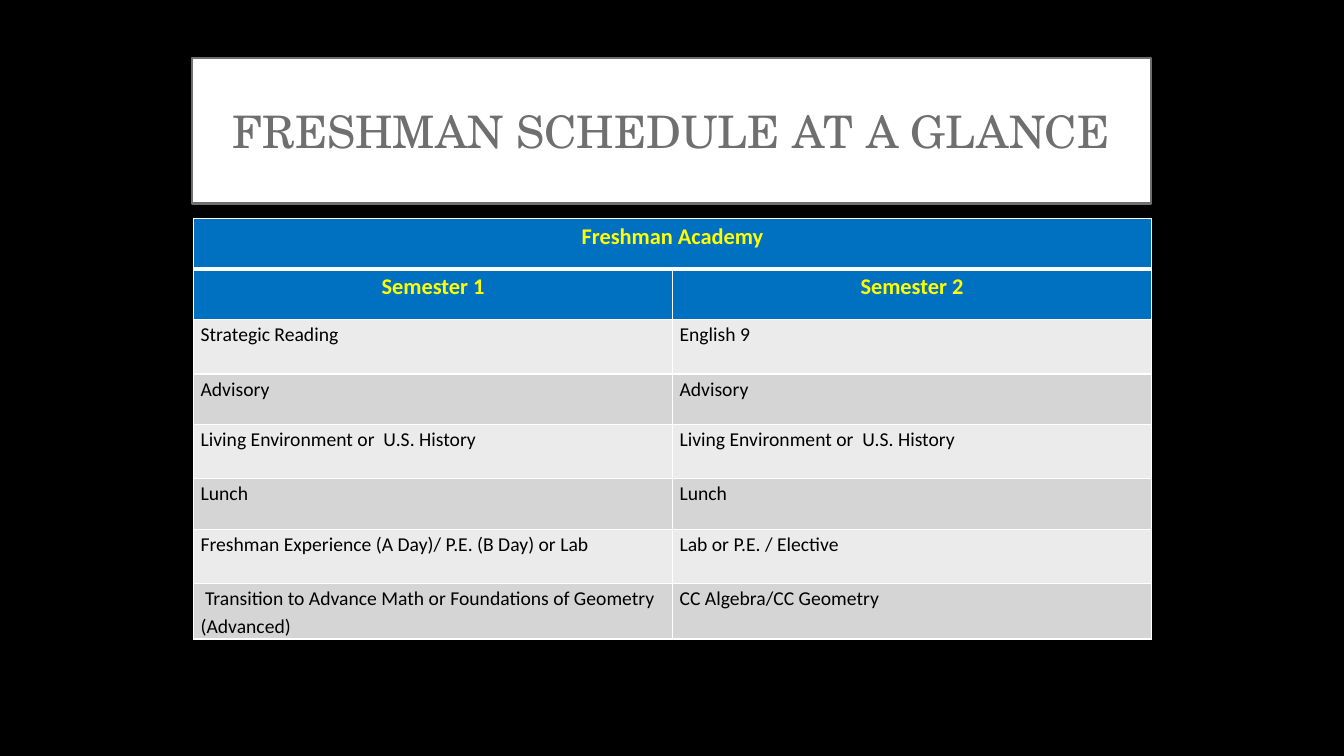
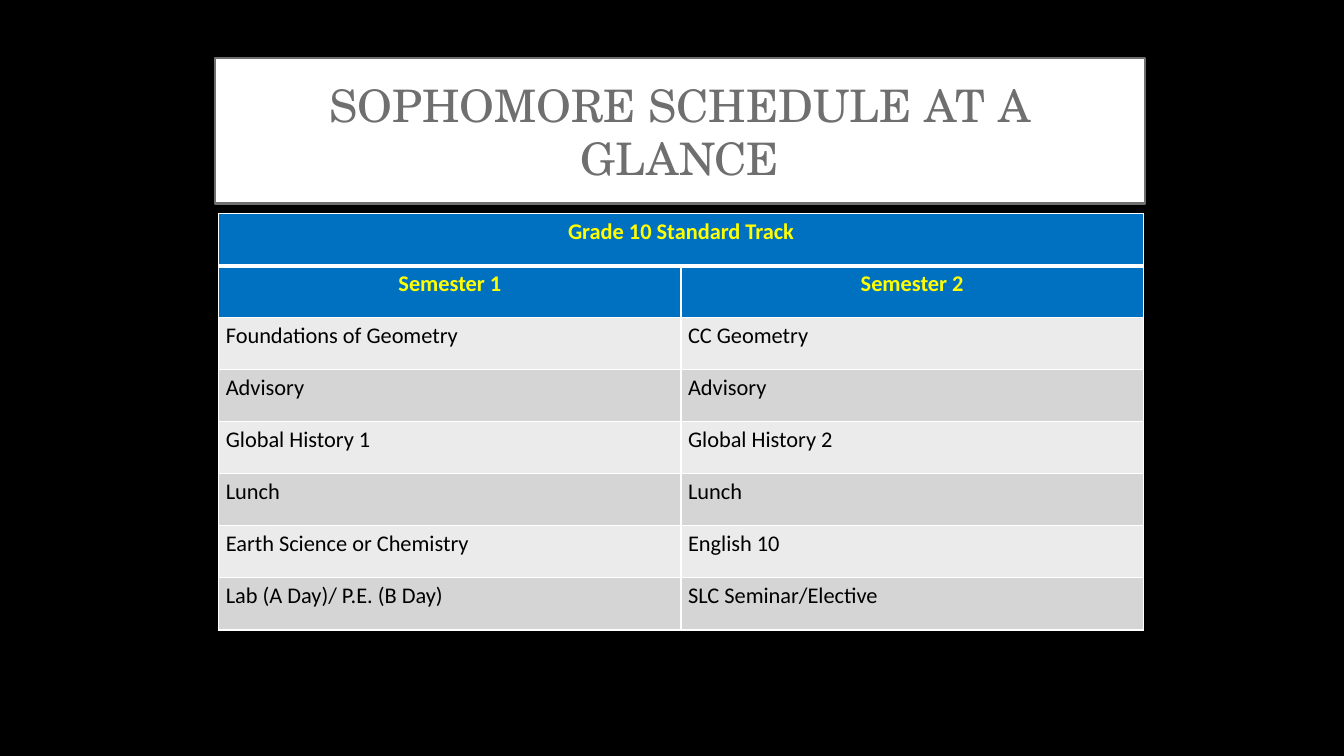
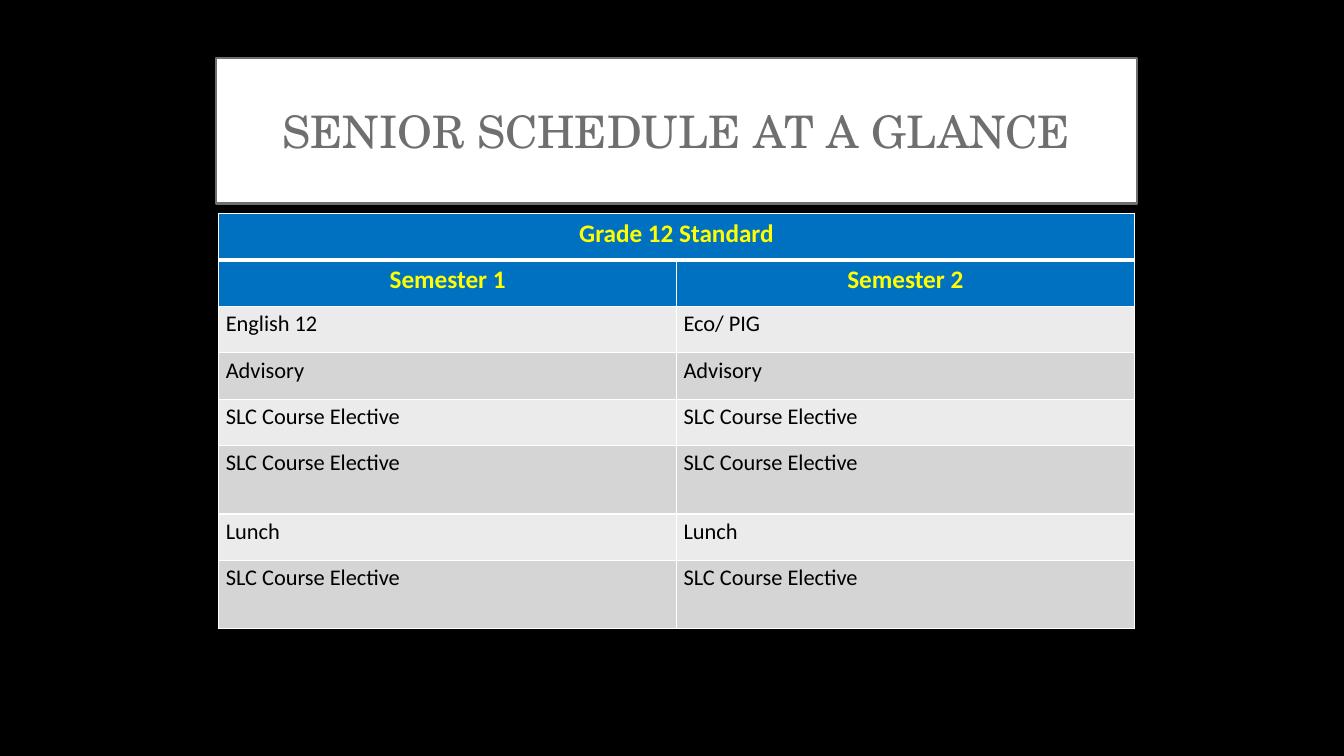
"""Build three slides that show class schedules by grade."""
from dataclasses import dataclass

from lxml import etree
from pptx import Presentation
from pptx.dml.color import RGBColor
from pptx.enum.shapes import MSO_SHAPE
from pptx.enum.text import MSO_ANCHOR, PP_ALIGN
from pptx.oxml.ns import qn
from pptx.util import Inches, Pt

RECT = MSO_SHAPE.RECTANGLE
MIDDLE = MSO_ANCHOR.MIDDLE
LEFT, CENTER = PP_ALIGN.LEFT, PP_ALIGN.CENTER
BLACK, WHITE, GRAY = "000000", "FFFFFF", "6F6F6F"
BLUE, YELLOW = "0070C0", "FFFF00"
BANDS = ("EBEBEB", "D5D5D5")
SERIF, SANS = "TeX Gyre Schola", "Calibri"
TOP, HIGH = 0.58, 1.44
THIN, THICK = 1, 3


@dataclass
class Plan:
    title: str
    box: tuple[float, float]
    grid: tuple[float, float, float]
    rows: list[float]
    sizes: tuple[int, int]
    head: str
    terms: list[tuple[str, str]]


PLANS = [
    Plan("FRESHMAN SCHEDULE AT A GLANCE", (1.9, 9.52), (1.92, 2.17, 9.5),
         [0.5, 0.5, 0.54, 0.5, 0.54, 0.5, 0.54, 0.55], (16, 14),
         "Freshman Academy", [
             ("Strategic Reading", "English 9"),
             ("Advisory", "Advisory"),
             ("Living Environment or  U.S. History",
              "Living Environment or  U.S. History"),
             ("Lunch", "Lunch"),
             ("Freshman Experience (A Day)/ P.E. (B Day) or Lab",
              "Lab or P.E. / Elective"),
             (" Transition to Advance Math or Foundations of Geometry (Advanced)",
              "CC Algebra/CC Geometry")]),
    Plan("SOPHOMORE SCHEDULE AT A GLANCE", (2.13, 9.23), (2.17, 2.12, 9.17),
         [4.13 / 8] * 8, (16, 16),
         "Grade 10 Standard Track", [
             ("Foundations of Geometry", "CC Geometry"),
             ("Advisory", "Advisory"),
             ("Global History 1", "Global History 2"),
             ("Lunch", "Lunch"),
             ("Earth Science or Chemistry", "English 10"),
             ("Lab (A Day)/ P.E. (B Day)", "SLC Seminar/Elective")]),
    Plan("SENIOR SCHEDULE AT A GLANCE", (2.14, 9.14), (2.17, 2.12, 9.08),
         [0.46, 0.46, 0.46, 0.46, 0.46, 0.68, 0.46, 0.68], (18, 16),
         "Grade 12 Standard", [
             ("English 12", "Eco/ PIG"),
             ("Advisory", "Advisory"),
             ("SLC Course Elective", "SLC Course Elective"),
             ("SLC Course Elective", "SLC Course Elective"),
             ("Lunch", "Lunch"),
             ("SLC Course Elective", "SLC Course Elective")]),
]


def paint(fill, tone: str) -> None:
    fill.solid()
    fill.fore_color.rgb = RGBColor.from_string(tone)


def write(frame, text: str, *, size: int, font: str, tone: str,
          bold: bool = False, align=LEFT, space: float = 1.0) -> None:
    para = frame.paragraphs[0]
    para.alignment = align
    para.line_spacing = space
    run = para.add_run()
    run.text = text
    run.font.size = Pt(size)
    run.font.name = font
    run.font.bold = bold
    run.font.color.rgb = RGBColor.from_string(tone)


def edge(cell, top: int, base: int) -> None:
    props = cell._tc.get_or_add_tcPr()
    sides = {"lnL": THIN, "lnR": THIN, "lnT": top, "lnB": base}
    for spot, (side, width) in enumerate(sides.items()):
        line = etree.Element(qn(f"a:{side}"), w=str(Pt(width)))
        fill = etree.SubElement(line, qn("a:solidFill"))
        etree.SubElement(fill, qn("a:srgbClr"), val=WHITE)
        props.insert(spot, line)


def add_title(slide, plan: Plan) -> None:
    left, width = plan.box
    box = slide.shapes.add_shape(RECT, Inches(left), Inches(TOP),
                                 Inches(width), Inches(HIGH))
    box.shadow.inherit = False
    paint(box.fill, WHITE)
    paint(box.line.fill, GRAY)
    box.line.width = Pt(1.5)
    frame = box.text_frame
    frame.word_wrap = True
    frame.vertical_anchor = MIDDLE
    write(frame, plan.title, size=32, font=SERIF, tone=GRAY, align=CENTER)


def add_grid(slide, plan: Plan) -> None:
    left, top, width = plan.grid
    texts = [(plan.head, ""), ("Semester 1", "Semester 2"), *plan.terms]
    table = slide.shapes.add_table(
        len(texts), 2, Inches(left), Inches(top),
        Inches(width), Inches(sum(plan.rows))).table
    for col in table.columns:
        col.width = Inches(width / 2)
    table.cell(0, 0).merge(table.cell(0, 1))
    for row, pair in enumerate(texts):
        table.rows[row].height = Inches(plan.rows[row])
        head = row < 2
        for col, text in enumerate(pair):
            cell = table.cell(row, col)
            cell.margin_left = cell.margin_right = Inches(0.07)
            cell.margin_top = cell.margin_bottom = 0
            paint(cell.fill, BLUE if head else BANDS[row % 2])
            edge(cell, THICK if row == 1 else THIN,
                 THICK if row == 0 else THIN)
            if text:
                write(cell.text_frame, text, font=SANS, space=1.15, bold=head,
                      size=plan.sizes[0 if head else 1],
                      tone=YELLOW if head else BLACK,
                      align=CENTER if head else LEFT)


def main() -> None:
    deck = Presentation()
    deck.slide_width, deck.slide_height = Inches(13.33), Inches(7.5)
    blank = deck.slide_layouts[6]
    for plan in PLANS:
        slide = deck.slides.add_slide(blank)
        paint(slide.background.fill, BLACK)
        add_title(slide, plan)
        add_grid(slide, plan)
    deck.save("out.pptx")


if __name__ == "__main__":
    main()
